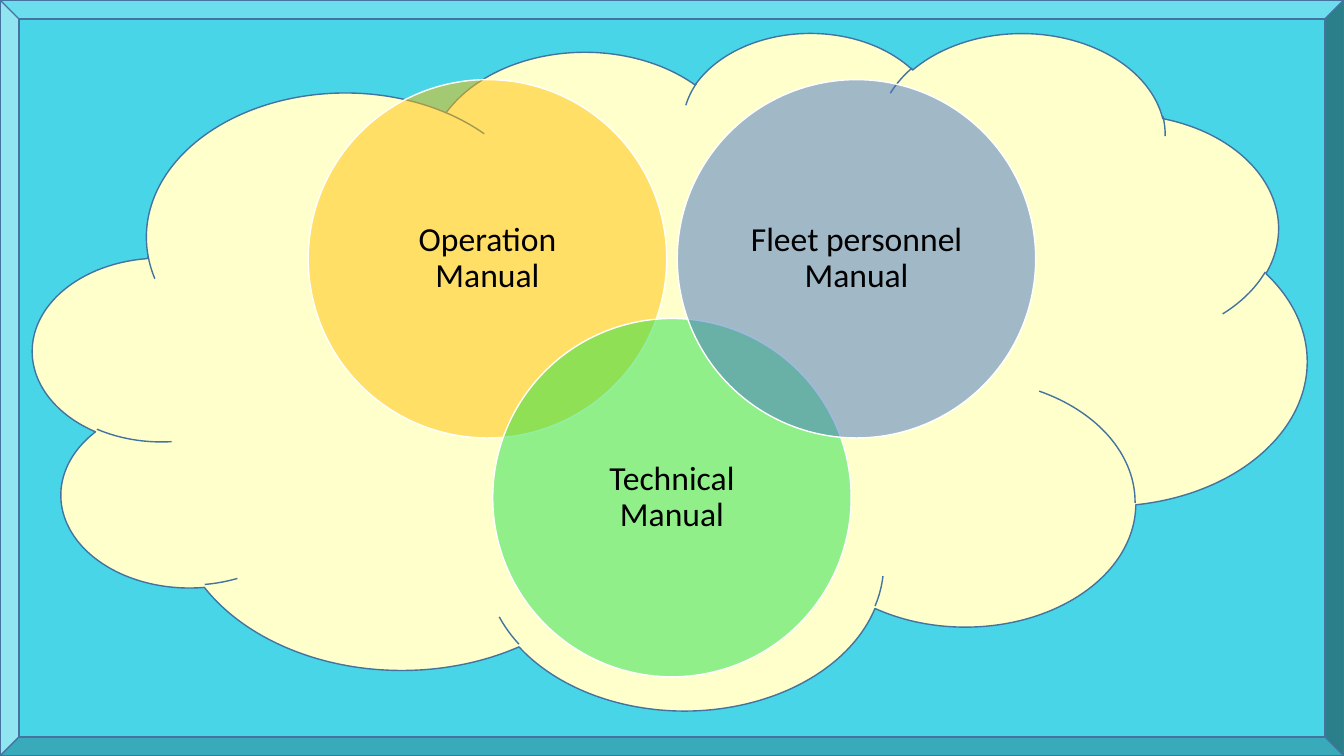
from lxml import etree
from pptx import Presentation
from pptx import util as u
from pptx.dml.color import RGBColor
from pptx.enum import shapes, text
from pptx.oxml.ns import qn

deck = Presentation()
deck.slide_width, deck.slide_height = u.Inches(13.33), u.Inches(7.5)
page = deck.slides.add_slide(deck.slide_layouts[6])
WIDTH, HEIGHT = 13.33, 7.5


def color(value):
    return RGBColor.from_string(value)


def add_filled(kind, left, top, width, height, fill, line):
    shape = page.shapes.add_shape(kind, *map(u.Inches, (left, top, width, height)))
    shape.shadow.inherit = False
    shape.fill.solid()
    shape.fill.fore_color.rgb = color(fill)
    shape.line.color.rgb = color(line)
    shape.line.width = u.Pt(1)
    return shape


kinds = shapes.MSO_SHAPE
frame = add_filled(kinds.BEVEL, 0, 0, WIDTH, HEIGHT, "48D5E8", "43739E")
frame.adjustments[0] = 0.025
add_filled(kinds.CLOUD, 0.33, 0.31, 12.63, 6.72, "FFFFCC", "43739E")

DIAMETER = 3.555
LABEL = 2.51
MARGIN = (DIAMETER - LABEL) / 2
COLUMN, ROW = 1.83, 2.37
LEFT, TOP = (WIDTH - DIAMETER) / 2 - COLUMN, 0.79

manuals = [
    ("Operation Manual", "FFC000", 0, 0),
    ("Technical Manual", "23E148", 1, 1),
    ("Fleet personnel Manual", "4472C4", 2, 0),
]
for title, fill, column, row in manuals:
    left, top = LEFT + column * COLUMN, TOP + row * ROW
    circle = add_filled(kinds.OVAL, left, top, DIAMETER, DIAMETER, fill, "FFFFFF")
    tint = circle.fill._xPr.find(qn("a:solidFill"))[0]
    etree.SubElement(tint, qn("a:alpha"), val="50000")

    box = page.shapes.add_textbox(
        *map(u.Inches, (left + MARGIN, top + MARGIN, LABEL, LABEL)))
    label = box.text_frame
    label.word_wrap = True
    label.vertical_anchor = text.MSO_ANCHOR.MIDDLE
    label.margin_left = label.margin_right = u.Inches(0.1)
    label.margin_top = label.margin_bottom = u.Inches(0.1)
    para = label.paragraphs[0]
    para.text = title
    para.alignment = text.PP_ALIGN.CENTER
    para.line_spacing = 0.9
    para.font.name = "Calibri"
    para.font.size = u.Pt(24)
    para.font.color.rgb = color("000000")

deck.save("out.pptx")
